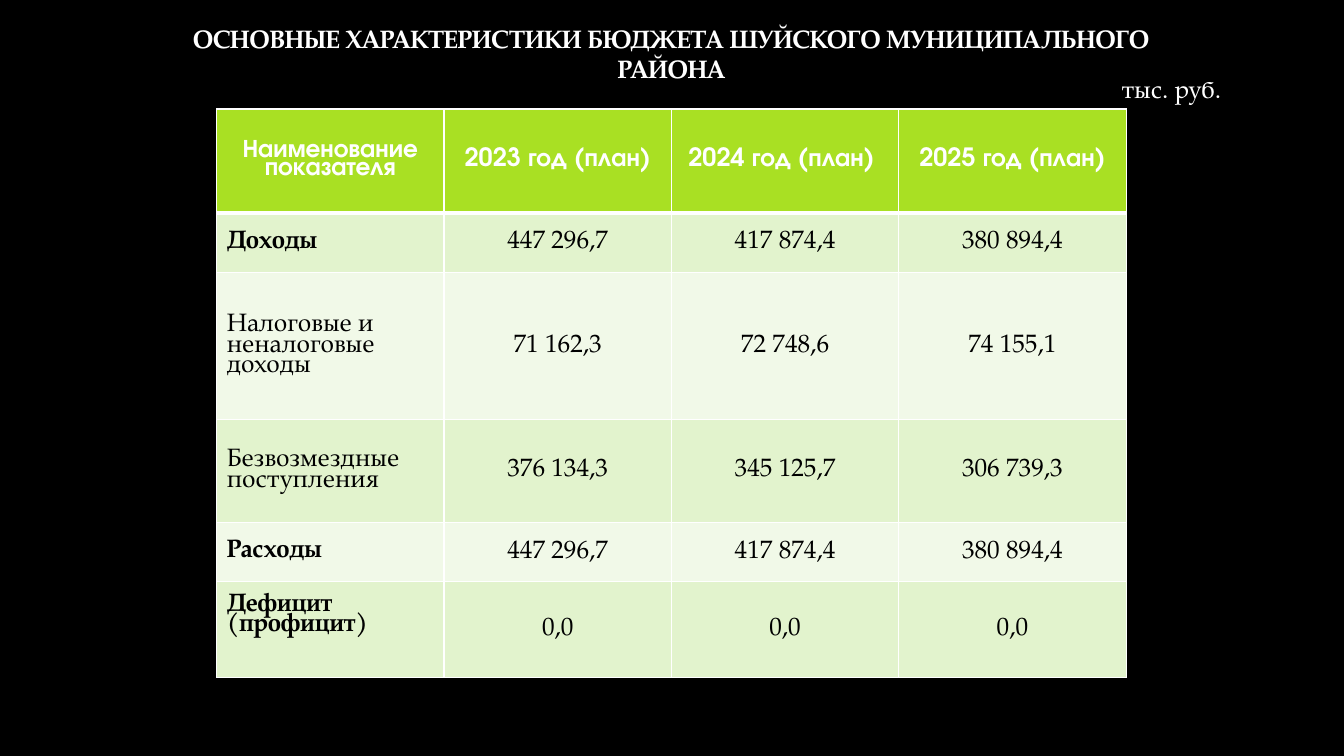
from dataclasses import dataclass

from lxml import etree
from pptx import Presentation
from pptx.dml.color import RGBColor
from pptx.enum.text import MSO_ANCHOR, PP_ALIGN
from pptx.oxml.ns import qn
from pptx.util import Pt

LEFT, CENTER = PP_ALIGN.LEFT, PP_ALIGN.CENTER
MIDDLE = MSO_ANCHOR.MIDDLE


@dataclass(frozen=True)
class Theme:
    black: str = "000000"
    white: str = "FFFFFF"
    head: str = "A9E023"
    dark: str = "E2F3CD"
    pale: str = "F1F9E8"
    sans: str = "TeX Gyre Adventor"
    serif: str = "TeX Gyre Pagella"
    size: float = 18
    thin: float = 1
    thick: float = 3
    pitch: float = 0.8


@dataclass(frozen=True)
class Style:
    font: str
    color: str
    bold: bool = False
    align: PP_ALIGN = LEFT


@dataclass(frozen=True)
class Label:
    text: str
    left: float
    top: float
    width: float
    height: float
    style: Style


@dataclass(frozen=True)
class Row:
    name: str
    values: tuple[str, str, str]
    height: float
    bold: bool = False
    drop: float = 3.6  # bottom margin of the name cell


THEME = Theme()
HEAD = Style(THEME.sans, THEME.white, True, CENTER)
VALUE = Style(THEME.serif, THEME.black, False, CENTER)

LABELS = (
    Label("ОСНОВНЫЕ ХАРАКТЕРИСТИКИ БЮДЖЕТА ШУЙСКОГО МУНИЦИПАЛЬНОГО РАЙОНА",
          103.7, 13, 751.7, 51, Style(THEME.serif, THEME.white, True, CENTER)),
    Label("тыс. руб.", 794.2, 49, 111.6, 29, Style(THEME.serif, THEME.white)),
)

ROWS = (
    Row("Наименование показателя",
        ("2023 год (план)", "2024 год (план) ", "2025 год (план)"), 74.2, True),
    Row("Доходы", ("447 296,7", "417 874,4", "380 894,4"), 42.4, True),
    Row("Налоговые и неналоговые доходы",
        ("71 162,3", "72 748,6", "74 155,1"), 105.3),
    Row("Безвозмездные поступления",
        ("376 134,3", "345 125,7", "306 739,3"), 73.2),
    Row("Расходы", ("447 296,7", "417 874,4", "380 894,4"), 42.6, True),
    Row("Дефицит (профицит)", ("0,0", "0,0", "0,0"), 68.4, True, 23.6),
)
TABLE_LEFT, TABLE_TOP, COL_WIDTH = 154.8, 77.9, 162.4


def write(frame, text: str, style: Style, pitch: float = 1.0) -> None:
    para = frame.paragraphs[0]
    para.alignment = style.align
    para.line_spacing = pitch
    run = para.add_run()
    run.text = text
    font = run.font
    font.name, font.size, font.bold = style.font, Pt(THEME.size), style.bold
    font.color.rgb = RGBColor.from_string(style.color)


def add_label(slide, label: Label) -> None:
    box = slide.shapes.add_textbox(Pt(label.left), Pt(label.top),
                                   Pt(label.width), Pt(label.height))
    box.text_frame.word_wrap = True
    write(box.text_frame, label.text, label.style)


def add_edges(cell, widths: dict[str, float]) -> None:
    props = cell._tc.get_or_add_tcPr()
    for spot, (side, width) in enumerate(widths.items()):
        line = etree.Element(qn(f"a:ln{side}"), w=str(Pt(width)))
        fill = etree.SubElement(line, qn("a:solidFill"))
        etree.SubElement(fill, qn("a:srgbClr"), val=THEME.white)
        props.insert(spot, line)


def fill_cell(cell, text: str, style: Style, fill: str, top: float,
              bottom: float) -> None:
    cell.vertical_anchor = MIDDLE
    cell.fill.solid()
    cell.fill.fore_color.rgb = RGBColor.from_string(fill)
    write(cell.text_frame, text, style, THEME.pitch)
    add_edges(cell, {"L": THEME.thin, "R": THEME.thin, "T": top, "B": bottom})


def add_grid(slide, rows: tuple[Row, ...]) -> None:
    count = 1 + len(rows[0].values)
    table = slide.shapes.add_table(
        len(rows), count, Pt(TABLE_LEFT), Pt(TABLE_TOP),
        Pt(COL_WIDTH * count), Pt(sum(row.height for row in rows))).table
    for col in table.columns:
        col.width = Pt(COL_WIDTH)
    for i, row in enumerate(rows):
        table.rows[i].height = Pt(row.height)
        fill = THEME.head if i == 0 else THEME.dark if i % 2 else THEME.pale
        name = Style(THEME.serif, THEME.black, row.bold)
        top = THEME.thick if i == 1 else THEME.thin
        bottom = THEME.thick if i == 0 else THEME.thin
        for j, text in enumerate((row.name, *row.values)):
            style = HEAD if i == 0 else VALUE if j else name
            fill_cell(table.cell(i, j), text, style, fill, top, bottom)
        table.cell(i, 0).margin_bottom = Pt(row.drop)


def main() -> None:
    deck = Presentation()
    deck.slide_width, deck.slide_height = Pt(960), Pt(540)
    slide = deck.slides.add_slide(deck.slide_layouts[6])

    # Background
    back = slide.background.fill
    back.solid()
    back.fore_color.rgb = RGBColor.from_string(THEME.black)

    # Budget table
    add_grid(slide, ROWS)

    # Title and unit
    for label in LABELS:
        add_label(slide, label)

    deck.save("out.pptx")


if __name__ == "__main__":
    main()
